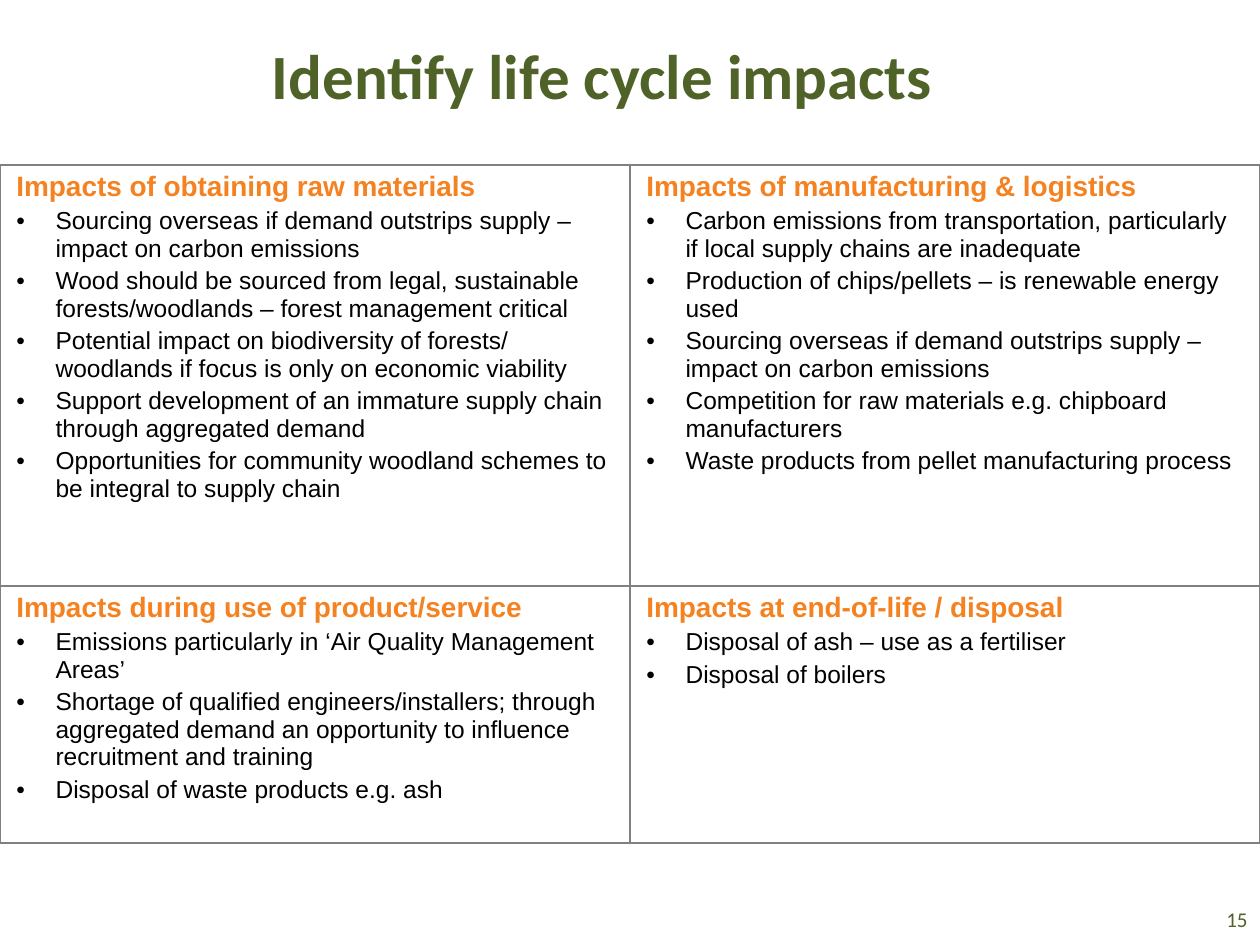
from typing import NamedTuple

from lxml import etree
from pptx import Presentation
from pptx import util as u
from pptx.dml.color import RGBColor
from pptx.enum import text
from pptx.oxml import ns

COLOURS = {"green": "4F6228", "orange": "F58220", "black": "000000", "grey": "808080"}
BULLET_INDENT = u.Cm(0.79)


class Stage(NamedTuple):
    heading: str
    impacts: list[str]


class Label(NamedTuple):
    wording: str
    box: tuple[float, float, float, float]  # left, top, width, height in cm
    size: int
    bold: bool
    align: text.PP_ALIGN
    right_inset: float = 0.25
    bottom_inset: float = 0.13


LABELS = [
    Label("Identify life cycle impacts", (0.89, 0, 22.78, 3.33), 36, True,
          text.PP_ALIGN.CENTER, 0.53, 0.46),
    Label("15", (23.47, 18.03, 1.93, 1.02), 12, False, text.PP_ALIGN.RIGHT),
]

# Life cycle stages, row by row
STAGES = [
    [
        Stage("Impacts of obtaining raw materials", [
            "Sourcing overseas if demand outstrips supply – impact on carbon emissions",
            "Wood should be sourced from legal, sustainable forests/woodlands – "
            "forest management critical",
            "Potential impact on biodiversity of forests/ woodlands if focus is only "
            "on economic viability",
            "Support development of an immature supply chain through aggregated demand",
            "Opportunities for community woodland schemes to be integral to supply chain",
        ]),
        Stage("Impacts of manufacturing & logistics", [
            "Carbon emissions from transportation, particularly if local supply chains "
            "are inadequate",
            "Production of chips/pellets – is renewable energy used",
            "Sourcing overseas if demand outstrips supply – impact on carbon emissions",
            "Competition for raw materials e.g. chipboard manufacturers",
            "Waste products from pellet manufacturing process",
        ]),
    ],
    [
        Stage("Impacts during use of product/service", [
            "Emissions particularly in ‘Air Quality Management Areas’",
            "Shortage of qualified engineers/installers; through aggregated demand an "
            "opportunity to influence recruitment and training",
            "Disposal of waste products e.g. ash",
        ]),
        Stage("Impacts at end-of-life / disposal", [
            "Disposal of ash – use as a fertiliser",
            "Disposal of boilers",
        ]),
    ],
]


def set_font(paragraph, name: str, size: int, colour: str, bold: bool) -> None:
    font = paragraph.font
    font.name, font.size, font.bold = name, u.Pt(size), bold
    font.color.rgb = RGBColor.from_string(COLOURS[colour])


def add_bullet(paragraph) -> None:
    props = paragraph._p.get_or_add_pPr()
    props.set("marL", str(BULLET_INDENT))
    props.set("indent", str(-BULLET_INDENT))
    etree.SubElement(props, ns.qn("a:buFont"), typeface="Arial")
    etree.SubElement(props, ns.qn("a:buChar"), char="•")


def add_borders(cell) -> None:
    props = cell._tc.get_or_add_tcPr()
    for position, side in enumerate(("lnL", "lnR", "lnT", "lnB")):
        line = etree.Element(ns.qn(f"a:{side}"), w=str(u.Pt(1)))
        fill = etree.SubElement(line, ns.qn("a:solidFill"))
        etree.SubElement(fill, ns.qn("a:srgbClr"), val=COLOURS["grey"])
        props.insert(position, line)


def add_label(slide, label: Label) -> None:
    frame = slide.shapes.add_textbox(*map(u.Cm, label.box)).text_frame
    frame.word_wrap = True
    frame.vertical_anchor = text.MSO_ANCHOR.MIDDLE
    frame.margin_right = u.Cm(label.right_inset)
    frame.margin_bottom = u.Cm(label.bottom_inset)
    paragraph = frame.paragraphs[0]
    paragraph.text = label.wording
    paragraph.alignment = label.align
    set_font(paragraph, "Calibri", label.size, "green", label.bold)


def fill_cell(cell, stage: Stage) -> None:
    cell.fill.background()
    add_borders(cell)
    cell.margin_left = cell.margin_right = u.Cm(0.33)
    cell.margin_top = cell.margin_bottom = u.Cm(0.13)
    heading = cell.text_frame.paragraphs[0]
    heading.text = stage.heading
    set_font(heading, "Arial", 16, "orange", True)
    for impact in stage.impacts:
        bullet = cell.text_frame.add_paragraph()
        bullet.text = impact
        bullet.space_before = u.Pt(2.8)
        add_bullet(bullet)
        set_font(bullet, "Arial", 14, "black", False)


def add_stage_table(slide) -> None:
    table = slide.shapes.add_table(
        2, 2, u.Cm(0), u.Cm(3.33), u.Cm(25.4), u.Cm(13.66)).table
    table.first_row = table.horz_banding = False
    for row, height, stages in zip(table.rows, (8.48, 5.18), STAGES):
        row.height = u.Cm(height)
        for cell, stage in zip(row.cells, stages):
            fill_cell(cell, stage)


def main() -> None:
    deck = Presentation()
    deck.slide_width, deck.slide_height = u.Cm(25.4), u.Cm(19.05)
    slide = deck.slides.add_slide(deck.slide_layouts[6])

    # Title and page number
    for label in LABELS:
        add_label(slide, label)

    # Impacts by life cycle stage
    add_stage_table(slide)
    deck.save("out.pptx")


if __name__ == "__main__":
    main()
